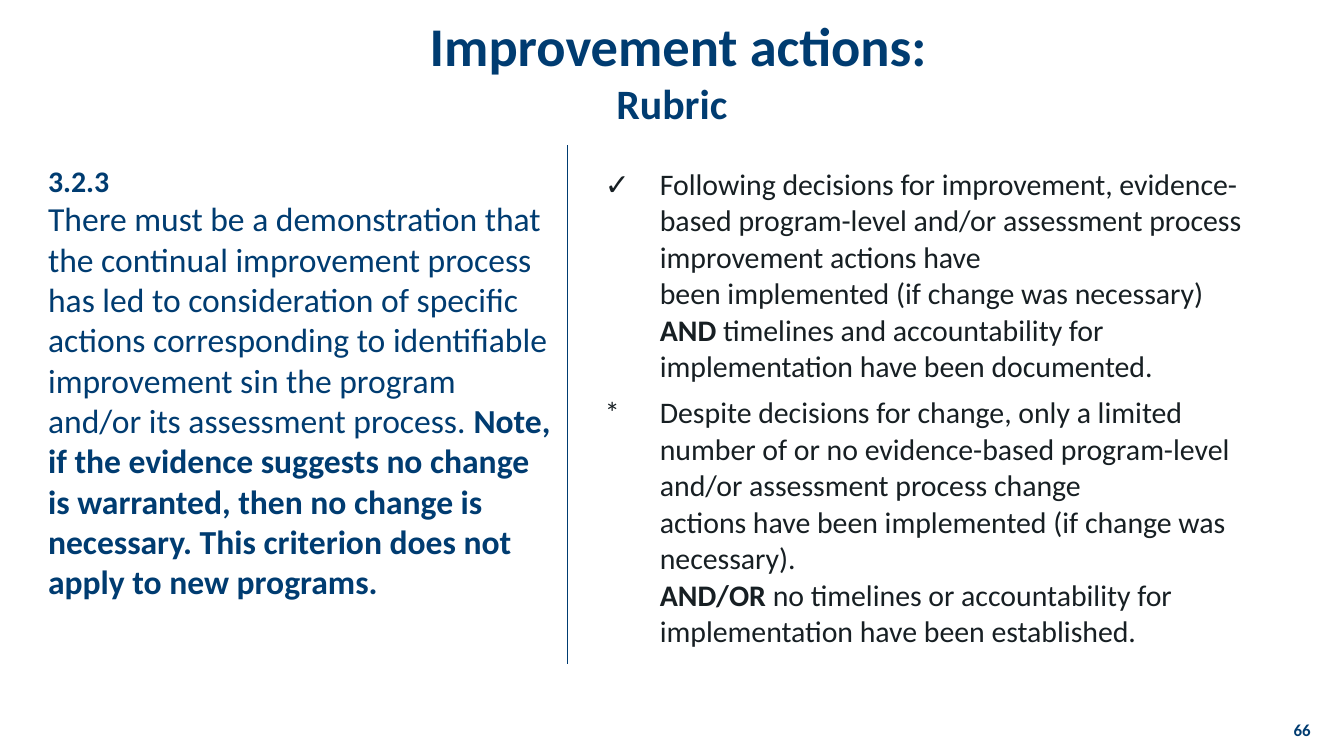
from lxml.etree import SubElement
from pptx import Presentation
from pptx.dml.color import RGBColor
from pptx.enum.shapes import MSO_CONNECTOR
from pptx.enum.text import MSO_ANCHOR, PP_ALIGN
from pptx.oxml.ns import qn
from pptx.util import Inches, Pt

COLORS = {"navy": "003C71", "ink": "171F23"}
FONT = "Calibri"

CRITERION = [
    [("3.2.3", 16, True)],
    [("There must be a demonstration that the continual improvement process "
      "has led to consideration of specific actions corresponding to "
      "identifiable improvement sin the program and/or its assessment "
      "process. ", 18, False),
     ("Note, if the evidence suggests no change is warranted, then no change "
      "is necessary. This criterion does not apply to new programs.", 18, True)],
]

RUBRIC = [
    ("✓", [
        [("Following decisions for improvement, evidence-based program-level "
          "and/or assessment process improvement actions have", 16, False)],
        [("been implemented (if change was necessary)", 16, False)],
        [("AND", 16, True),
         (" timelines and accountability for implementation have been "
          "documented.", 16, False)],
    ]),
    ("*", [
        [("Despite decisions for change, only a limited number of or no "
          "evidence-based program-level and/or assessment process change",
          16, False)],
        [("actions have been implemented (if change was necessary).", 16, False)],
        [("AND/OR ", 16, True),
         ("no timelines or accountability for implementation have been "
          "established.", 16, False)],
    ]),
]


def write_paragraphs(tf, paragraphs, color, align=PP_ALIGN.LEFT):
    """Fill a text frame; each paragraph is a list of (text, size, bold)."""
    for i, runs in enumerate(paragraphs):
        p = tf.paragraphs[0] if i == 0 else tf.add_paragraph()
        p.alignment = align
        for text, size, bold in runs:
            if text == "\n":
                p.add_line_break()
                continue
            r = p.add_run()
            r.text = text
            r.font.name = FONT
            r.font.size = Pt(size)
            r.font.bold = bold
            r.font.color.rgb = RGBColor.from_string(COLORS[color])


def add_text(s, box, paragraphs, align=PP_ALIGN.LEFT, anchor=MSO_ANCHOR.TOP,
             inset=0.05):
    tf = s.shapes.add_textbox(*map(Inches, box)).text_frame
    tf.word_wrap = True
    tf.vertical_anchor = anchor
    tf.margin_top = tf.margin_bottom = Inches(inset)
    write_paragraphs(tf, paragraphs, "navy", align)


def add_divider(s, x, top, bottom):
    line = s.shapes.add_connector(MSO_CONNECTOR.STRAIGHT, Inches(x),
                                  Inches(top), Inches(x), Inches(bottom))
    line.line.color.rgb = RGBColor.from_string(COLORS["navy"])
    line.line.width = Pt(0.5)
    SubElement(line._element.spPr, qn("a:effectLst"))


def add_rubric(s):
    frame = s.shapes.add_table(len(RUBRIC), 2, Inches(4.4), Inches(1.19),
                               Inches(5.13), Inches(3.67))
    table = frame.table
    table.first_row = table.horz_banding = False
    for column, width in zip(table.columns, (0.41, 4.72)):
        column.width = Inches(width)
    for row, height, (mark, paragraphs) in zip(table.rows, (1.7, 1.97), RUBRIC):
        row.height = Inches(height)
        for cell, content in zip(row.cells, ([[(mark, 16, False)]], paragraphs)):
            cell.fill.background()
            cell.margin_left = cell.margin_right = Inches(0.1)
            cell.margin_top, cell.margin_bottom = Inches(0.05), Inches(0.02)
            write_paragraphs(cell.text_frame, content, "ink")


def main():
    prs = Presentation()
    prs.slide_width = Inches(10)
    prs.slide_height = prs.slide_width * 9 // 16
    s = prs.slides.add_slide(prs.slide_layouts[6])
    add_text(s, (0.5, 0.06, 9, 0.94),
             [[(" Improvement actions:", 29.2, True), ("\n", 0, False),
               ("Rubric", 22.4, True)]],
             PP_ALIGN.CENTER, MSO_ANCHOR.BOTTOM)
    add_text(s, (0.26, 1.16, 3.94, 3.7), CRITERION)
    add_divider(s, 4.22, 1.08, 4.94)
    add_text(s, (9.49, 5.35, 0.36, 0.16), [[("66", 9, True)]],
             PP_ALIGN.RIGHT, MSO_ANCHOR.MIDDLE, 0)
    add_rubric(s)
    prs.save("out.pptx")


if __name__ == "__main__":
    main()
